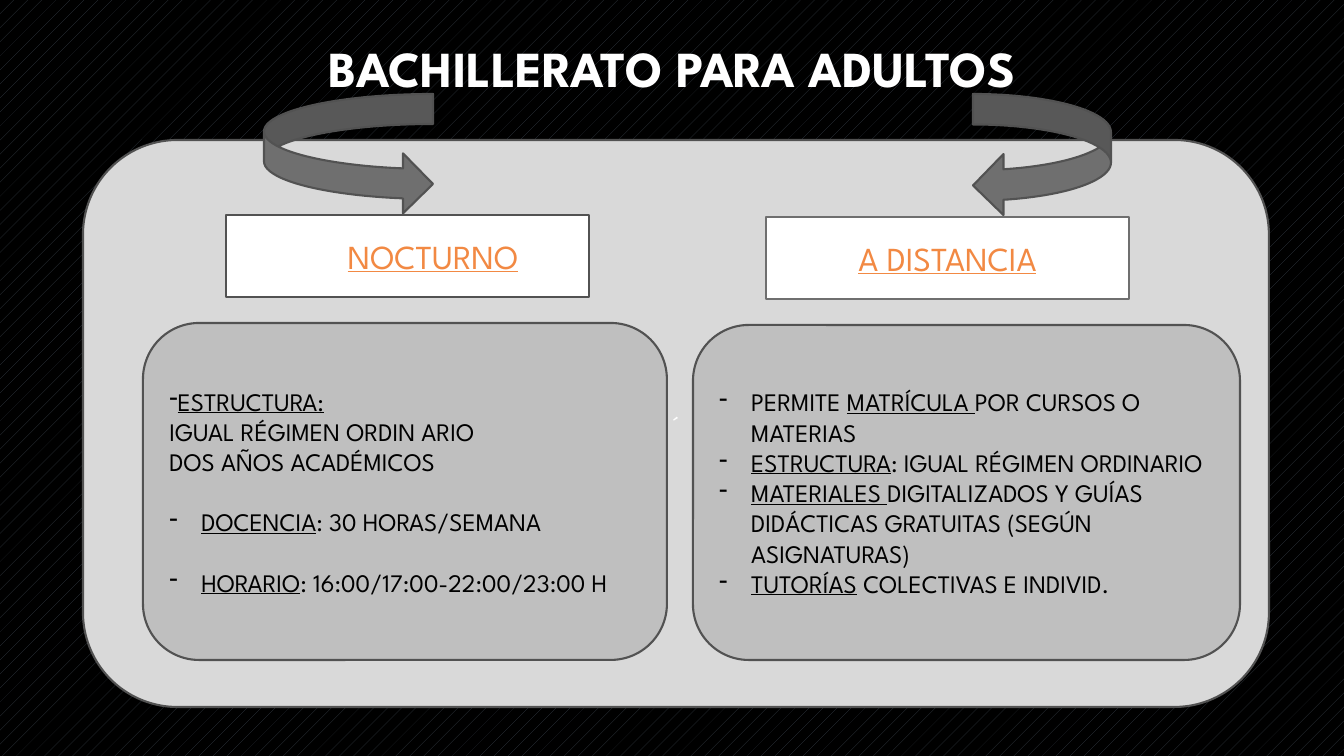
from lxml import etree
from pptx import Presentation
from pptx.dml.color import RGBColor
from pptx.enum.dml import MSO_PATTERN
from pptx.enum.shapes import MSO_SHAPE
from pptx.enum.text import MSO_ANCHOR, PP_ALIGN
from pptx.oxml.ns import qn
from pptx.util import Pt

RECTANGLE = MSO_SHAPE.RECTANGLE
ROUNDED = MSO_SHAPE.ROUNDED_RECTANGLE
RIGHT_ARROW = MSO_SHAPE.CURVED_RIGHT_ARROW
LEFT_ARROW = MSO_SHAPE.CURVED_LEFT_ARROW
MIDDLE = MSO_ANCHOR.MIDDLE
CENTER = PP_ALIGN.CENTER
LEFT = PP_ALIGN.LEFT
FIVE_PERCENT = MSO_PATTERN.PERCENT_5

PX = 12192000 / 1344
THEME = {
    "font": "League Spartan",
    "title_size": 36, "heading_size": 24, "body_size": 18,
    "line_width": 1.5,
    "black": RGBColor.from_string("000000"),
    "pattern": RGBColor.from_string("363D46"),
    "white": RGBColor.from_string("FFFFFF"),
    "silver": RGBColor.from_string("A6A6A6"),
    "panel": RGBColor.from_string("D9D9D9"),
    "card": RGBColor.from_string("BFBFBF"),
    "arrow": RGBColor.from_string("6F6F6F"),
    "outline": RGBColor.from_string("525252"),
    "accent": RGBColor.from_string("F28943"),
}


def px(*values):
    return [round(value * PX) for value in values]


def write(shape, paragraphs, size, color, alignment, bold=False):
    frame = shape.text_frame
    frame.word_wrap = True
    frame.vertical_anchor = MIDDLE
    for index, (bullet, indent, gap, runs) in enumerate(paragraphs):
        paragraph = frame.add_paragraph() if index else frame.paragraphs[0]
        paragraph.alignment = alignment
        paragraph.space_before = px(gap)[0]
        properties = paragraph._p.get_or_add_pPr()
        margin = px(indent)[0]
        properties.set("marL", str(margin))
        properties.set("indent", str(-margin if bullet else 0))
        if bullet:
            etree.SubElement(properties, qn("a:buChar")).set("char", bullet)
        for text, underline in runs:
            run = paragraph.add_run()
            run.text = text
            run.font.color.rgb = color
            formats = {"name": THEME["font"], "size": Pt(size), "bold": bold, "underline": underline}
            for name, value in formats.items():
                setattr(run.font, name, value)


presentation = Presentation()
presentation.slide_width, presentation.slide_height = px(1344, 756)
slide = presentation.slides.add_slide(presentation.slide_layouts[6])
background = slide.background.fill
background.patterned()
background.pattern = FIVE_PERCENT
background.fore_color.rgb = THEME["pattern"]
background.back_color.rgb = THEME["black"]

title = slide.shapes.add_textbox(*px(126, 20, 1092, 95))
write(title, [("", 0, 0, [("BACHILLERATO PARA ADULTOS", False)])],
      THEME["title_size"], THEME["white"], CENTER, bold=True)
title_fill = title.text_frame.paragraphs[0].runs[0].font.fill
title_fill.gradient()
title_fill.gradient_angle = 267
for stop, color in zip(title_fill.gradient_stops, ("white", "silver")):
    stop.color.rgb = THEME[color]

night_details = [
    ("-", 0, 0, [("ESTRUCTURA:", True)]),
    ("", 0, 0, [("IGUAL RÉGIMEN ORDIN ARIO", False)]),
    ("", 0, 0, [("DOS AÑOS ACADÉMICOS", False)]),
    ("-", 32, 30, [("DOCENCIA", True), (": 30 HORAS/SEMANA", False)]),
    ("-", 32, 30, [("HORARIO", True), (": 16:00/17:00-22:00/23:00 H", False)]),
]
distance_details = [
    ("-", 32, 0, [("PERMITE ", False), ("MATRÍCULA ", True), ("POR CURSOS O MATERIAS", False)]),
    ("-", 32, 0, [("ESTRUCTURA", True), (": IGUAL RÉGIMEN ORDINARIO", False)]),
    ("-", 32, 0, [("MATERIALES ", True),
                  ("DIGITALIZADOS Y GUÍAS DIDÁCTICAS GRATUITAS (SEGÚN ASIGNATURAS)", False)]),
    ("-", 32, 0, [("TUTORÍAS", True), (" COLECTIVAS E INDIVID.", False)]),
]
panel_mark = [("", 0, 0, [("´", False)])]
night_heading = [("", 51, 0, [("NOCTURNO", True)])]
distance_heading = [("", 0, 0, [("A DISTANCIA", True)])]

panel_text = (THEME["body_size"], THEME["white"], CENTER)
heading_text = (THEME["heading_size"], THEME["accent"], CENTER)
body_text = (THEME["body_size"], THEME["black"], LEFT)

blocks = [
    (ROUNDED, (83, 140, 1186, 567), "panel", "outline", panel_mark, panel_text),
    (RIGHT_ARROW, (264, 94, 169, 120), "arrow", "outline", [], body_text),
    (LEFT_ARROW, (973, 94, 138, 122), "arrow", "outline", [], body_text),
    (RECTANGLE, (226, 215, 363, 82), "white", "outline", night_heading, heading_text),
    (RECTANGLE, (766, 217, 363, 82), "white", "arrow", distance_heading, heading_text),
    (ROUNDED, (143, 323, 524, 337), "card", "outline", night_details, body_text),
    (ROUNDED, (693, 325, 547, 335), "card", "outline", distance_details, body_text),
]
for kind, box, fill, line, paragraphs, text_format in blocks:
    shape = slide.shapes.add_shape(kind, *px(*box))
    shape.shadow.inherit = False
    shape.fill.solid()
    shape.fill.fore_color.rgb = THEME[fill]
    shape.line.color.rgb = THEME[line]
    shape.line.width = Pt(THEME["line_width"])
    write(shape, paragraphs, *text_format)

presentation.save("out.pptx")
